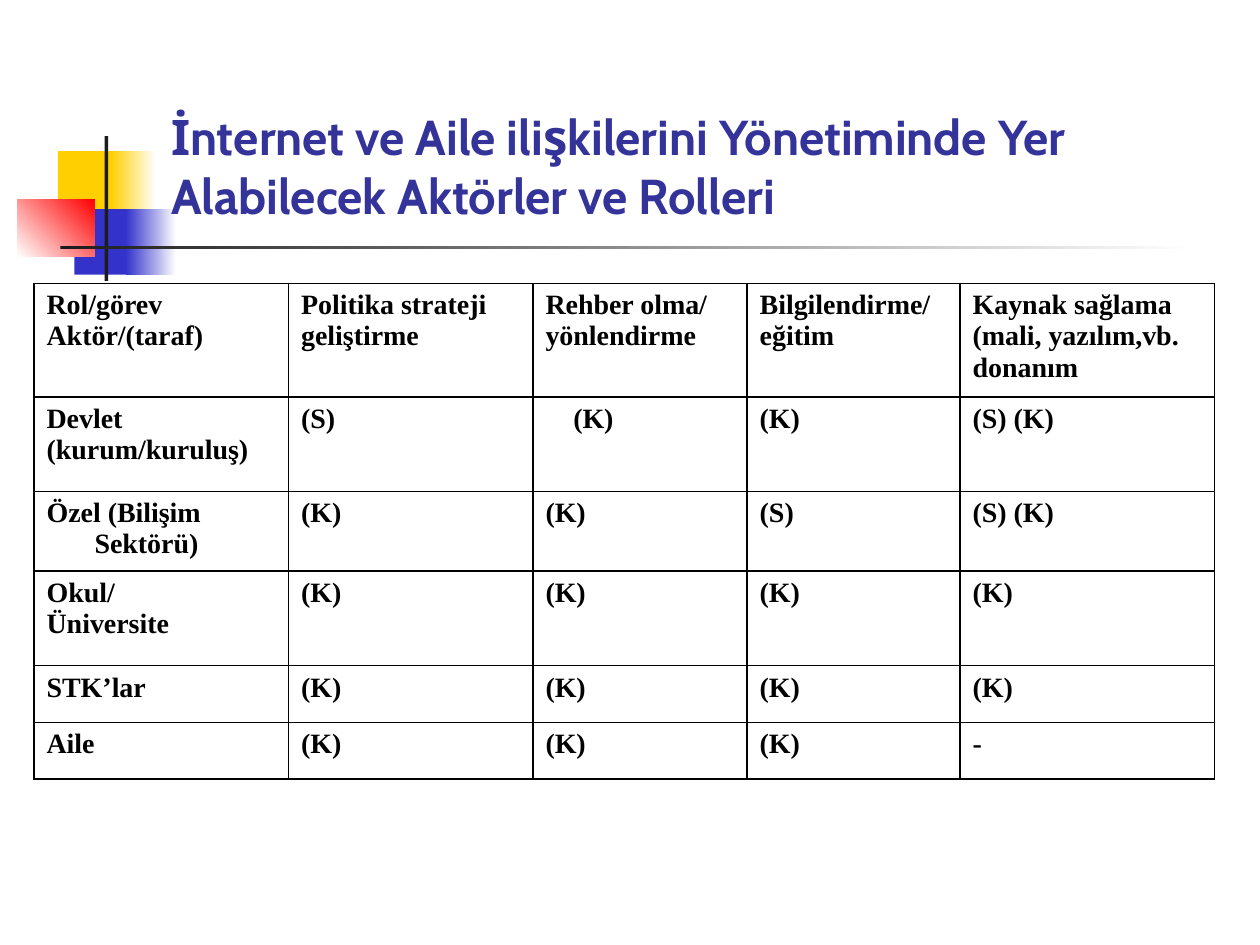
from lxml.etree import SubElement
from pptx import Presentation
from pptx.dml.color import RGBColor
from pptx.enum.shapes import MSO_SHAPE as Shape
from pptx.enum.text import MSO_ANCHOR as Anchor
from pptx.oxml.ns import qn
from pptx.util import Inches, Pt

TITLE = "İnternet ve Aile ilişkilerini Yönetiminde Yer Alabilecek Aktörler ve Rolleri"
TITLE_FONT = {"name": "Cabin", "size": Pt(28), "bold": True}
CELL_FONT = {"name": "Times New Roman", "size": Pt(16), "bold": True}
HANGING = 0.38
SHIFTED_CELL = (1, 2)

DECORATIONS = [
    ((0.46, 1.2, 0.48, 0.52), ["FFCF01"], 0),
    ((0.88, 1.2, 0.36, 0.52), ["FFCF01", "FFFFFF"], 0),
    ((0.59, 1.66, 0.46, 0.52), ["3333CC"], 0),
    ((1, 1.66, 0.4, 0.52), ["3333CC", "FFFFFF"], 0),
    ((0.14, 1.58, 0.61, 0.46), ["FFFFFF", "FF0000"], 45),
    ((0.83, 1.08, 0.03, 1.15), ["1C1C1C"], 0),
    ((0.48, 1.95, 9, 0.03), ["1C1C1C", "FFFFFF"], 0),
]

COLUMN_WIDTHS = [2.02, 1.94, 1.7, 1.69, 2.02]
ROW_HEIGHTS = [0.84, 0.75, 0.59, 0.75, 0.45, 0.45]
ROLES = [
    ["Rol/görev\nAktör/(taraf)", "Politika strateji\ngeliştirme", "Rehber olma/\nyönlendirme",
     "Bilgilendirme/\neğitim", "Kaynak sağlama\n(mali, yazılım,vb.\ndonanım"],
    ["Devlet\n(kurum/kuruluş)", "(S)", "(K)", "(K)", "(S) (K)"],
    ["Özel (Bilişim Sektörü)", "(K)", "(K)", "(S)", "(S) (K)"],
    ["Okul/\nÜniversite", "(K)", "(K)", "(K)", "(K)"],
    ["STK’lar", "(K)", "(K)", "(K)", "(K)"],
    ["Aile", "(K)", "(K)", "(K)", "-"],
]


def color(value):
    return RGBColor.from_string(value)


def apply_font(font, values, font_color):
    for name, value in values.items():
        setattr(font, name, value)
    font.color.rgb = color(font_color)


def add_decoration(slide, box, colors, angle):
    shape = slide.shapes.add_shape(Shape.RECTANGLE, *map(Inches, box))
    shape.shadow.inherit = False
    shape.line.fill.background()
    if len(colors) == 1:
        shape.fill.solid()
        shape.fill.fore_color.rgb = color(colors[0])
        return
    shape.fill.gradient()
    shape.fill.gradient_angle = angle
    for stop, value in zip(shape.fill.gradient_stops, colors):
        stop.color.rgb = color(value)


def add_title(slide):
    shape = slide.shapes.add_textbox(Inches(1.26), Inches(0.23), Inches(8.52), Inches(1.6))
    frame = shape.text_frame
    frame.word_wrap = True
    frame.vertical_anchor = Anchor.BOTTOM
    frame.text = TITLE
    apply_font(frame.paragraphs[0].runs[0].font, TITLE_FONT, "333399")


def add_borders(cell):
    properties = cell._tc.get_or_add_tcPr()
    for side in ("a:lnL", "a:lnR", "a:lnT", "a:lnB"):
        line = SubElement(properties, qn(side), w=str(Pt(1)))
        fill = SubElement(line, qn("a:solidFill"))
        SubElement(fill, qn("a:srgbClr"), val="000000")


def fill_cell(cell, text, indent):
    add_borders(cell)
    cell.fill.background()
    cell.text = text
    for paragraph in cell.text_frame.paragraphs:
        properties = paragraph._p.get_or_add_pPr()
        properties.set("marL", str(Inches(HANGING)))
        properties.set("indent", str(Inches(indent)))
        apply_font(paragraph.runs[0].font, CELL_FONT, "000000")


def add_roles_table(slide):
    frame = slide.shapes.add_table(
        len(ROW_HEIGHTS), len(COLUMN_WIDTHS), Inches(0.27), Inches(2.25),
        Inches(sum(COLUMN_WIDTHS)), Inches(sum(ROW_HEIGHTS)))
    table = frame.table
    table.first_row = table.horz_banding = False
    for column, width in zip(table.columns, COLUMN_WIDTHS):
        column.width = Inches(width)
    for row, height in zip(table.rows, ROW_HEIGHTS):
        row.height = Inches(height)
    for row_index, texts in enumerate(ROLES):
        for column_index, text in enumerate(texts):
            shifted = (row_index, column_index) == SHIFTED_CELL
            indent = -0.16 if shifted else -HANGING
            fill_cell(table.cell(row_index, column_index), text, indent)


def main():
    presentation = Presentation()
    presentation.slide_width = Inches(10)
    presentation.slide_height = Inches(7.5)
    slide = presentation.slides.add_slide(presentation.slide_layouts[6])
    for box, colors, angle in DECORATIONS:
        add_decoration(slide, box, colors, angle)
    add_title(slide)
    add_roles_table(slide)
    presentation.save("out.pptx")


if __name__ == "__main__":
    main()
